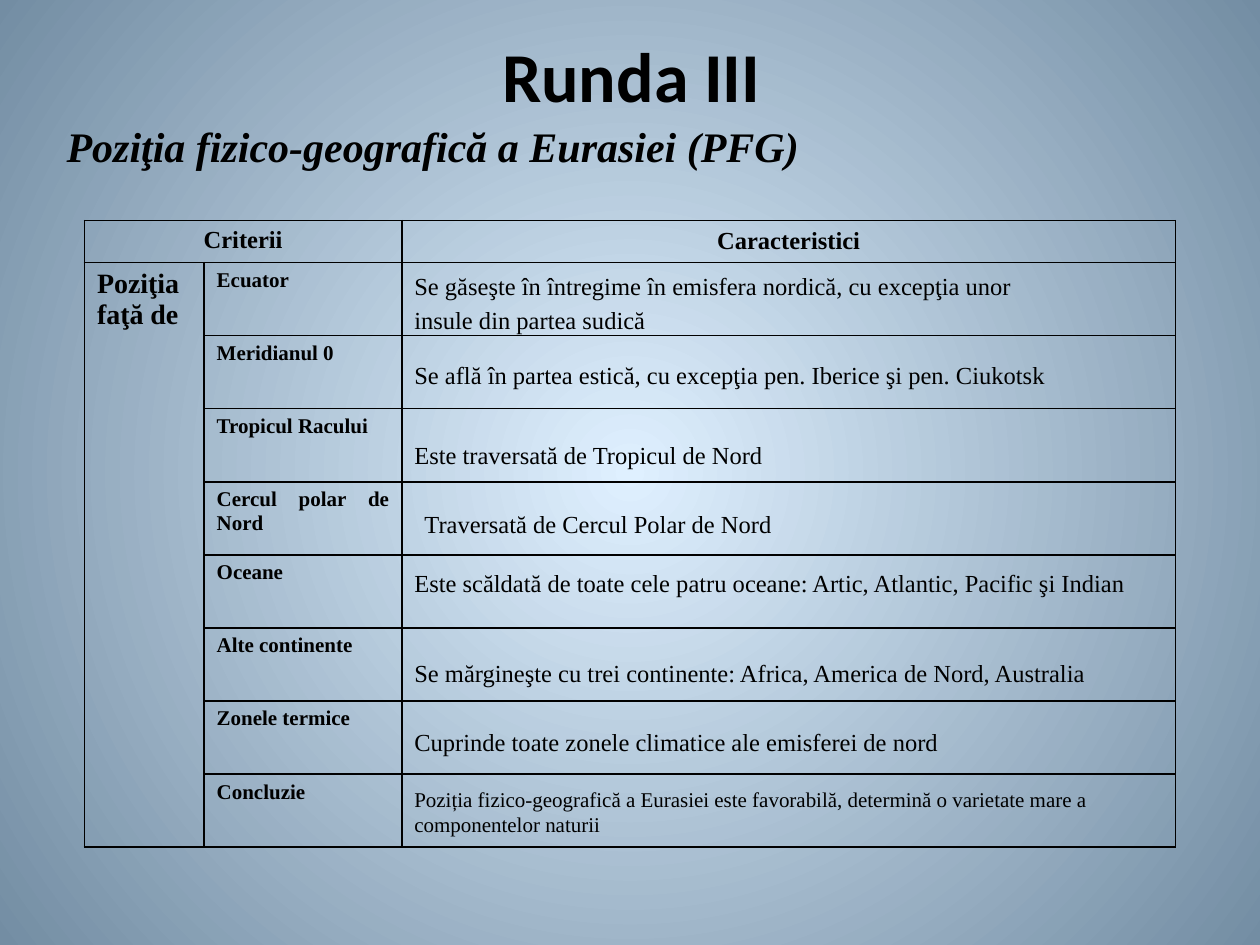
from lxml.etree import SubElement
from pptx import Presentation
from pptx.dml.color import RGBColor
from pptx.enum.text import MSO_ANCHOR as Anchor, MSO_AUTO_SIZE as AutoSize, PP_ALIGN as Align
from pptx.oxml.ns import qn
from pptx.util import Inches, Pt

BLACK = RGBColor(0x00, 0x00, 0x00)
GLOW = RGBColor(0xDF, 0xF0, 0xFF)
STEEL = RGBColor(0x73, 0x8D, 0xA3)
SERIF = "Times New Roman"


def write(paragraph, text, size, font=SERIF, bold=False, italic=False, align=Align.LEFT):
    paragraph.alignment = align
    run = paragraph.add_run()
    run.text = text
    run.font.name, run.font.size = font, Pt(size)
    run.font.bold, run.font.italic = bold, italic
    run.font.color.rgb = BLACK


def add_frame(left, top, width, height, anchor=Anchor.TOP):
    frame = slide.shapes.add_textbox(
        Inches(left), Inches(top), Inches(width), Inches(height)).text_frame
    frame.word_wrap = True
    frame.vertical_anchor = anchor
    return frame


prs = Presentation()
prs.slide_width, prs.slide_height = Inches(10), Inches(7.5)
slide = prs.slides.add_slide(prs.slide_layouts[6])

# Background: light centre fading outwards
backdrop = slide.background.fill
backdrop.gradient()
for stop, colour in zip(backdrop.gradient_stops, (GLOW, STEEL)):
    stop.color.rgb = colour
grad = slide.background._cSld.find(".//" + qn("a:gradFill"))
grad.remove(grad.find(qn("a:lin")))
circle = SubElement(grad, qn("a:path"), {"path": "circle"})
SubElement(circle, qn("a:fillToRect"), {side: "50000" for side in "ltrb"})

# Title and subtitle
title = add_frame(0.51, 0.21, 9, 0.77, Anchor.MIDDLE)
write(title.paragraphs[0], "Runda III", 40, "Calibri", bold=True, align=Align.CENTER)
subtitle = add_frame(0.43, 0.91, 8.12, 0.5, Anchor.MIDDLE)
subtitle.paragraphs[0].space_before = Pt(4.8)
write(subtitle.paragraphs[0], "Poziţia fizico-geografică a Eurasiei (PFG)", 24,
      bold=True, italic=True)

# Criteria table
criteria = ["Ecuator", "Meridianul 0", "Tropicul Racului", "Cercul polar de Nord",
            "Oceane", "Alte continente", "Zonele termice", "Concluzie"]
table = slide.shapes.add_table(len(criteria) + 1, 3, Inches(0.67), Inches(1.75),
                               Inches(8.66), Inches(4.95)).table
table.first_row = table.horz_banding = False
for column, width in zip(table.columns, (0.95, 1.57, 6.14)):
    column.width = Inches(width)
for index, row in enumerate(table.rows):
    row.height = Inches(0.58 if index else 0.31)

# Clear cells with thin black borders
for cell in table.iter_cells():
    props = cell._tc.get_or_add_tcPr()
    for side in ("a:lnL", "a:lnR", "a:lnT", "a:lnB"):
        border = SubElement(props, qn(side), {"w": str(Pt(1))})
        ink = SubElement(border, qn("a:solidFill"))
        SubElement(ink, qn("a:srgbClr"), {"val": str(BLACK)})
    cell.fill.background()

table.cell(0, 0).merge(table.cell(0, 1))
table.cell(1, 0).merge(table.cell(len(criteria), 0))
table.cell(0, 2).vertical_anchor = Anchor.MIDDLE
labels = [(0, 0, "Criterii", 14, Align.CENTER),
          (0, 2, "Caracteristici", 14, Align.CENTER),
          (1, 0, "Poziţia faţă de", 16, Align.LEFT)]
labels += [(row, 1, name, 12, Align.JUSTIFY) for row, name in enumerate(criteria, 1)]
for row, column, label, size, align in labels:
    write(table.cell(row, column).text_frame.paragraphs[0], label, size,
          bold=True, align=align)

# Answers laid over the last column: left, top, width, height, size, space before, lines
answers = [
    (3.19, 2.1, 5.83, 0.61, 14, 2.8,
     ["Se găseşte în întregime în emisfera nordică, cu excepţia unor",
      "insule din partea sudică"]),
    (3.19, 2.81, 5.83, 0.33, 14, 2.8,
     ["Se află în partea estică, cu excepţia pen. Iberice şi pen. Ciukotsk"]),
    (3.19, 3.44, 5.83, 0.33, 14, 0, ["Este traversată de Tropicul de Nord"]),
    (3.27, 3.99, 5.83, 0.33, 14, 0, ["Traversată de Cercul Polar de Nord"]),
    (3.19, 4.46, 6.06, 0.33, 14, 0,
     ["Este scăldată de toate cele patru oceane: Artic, Atlantic, Pacific şi Indian"]),
    (3.19, 5.17, 6.06, 0.33, 14, 0,
     ["Se mărgineşte cu trei continente: Africa, America de Nord, Australia"]),
    (3.19, 5.72, 6.06, 0.33, 14, 0,
     ["Cuprinde toate zonele climatice ale emisferei de nord"]),
    (3.19, 6.19, 6.14, 0.5, 12, 2.4,
     ["Poziția fizico-geografică a Eurasiei este favorabilă, determină o varietate "
      "mare a componentelor naturii"]),
]
for left, top, width, height, size, gap, lines in answers:
    answer = add_frame(left, top, width, height)
    answer.auto_size = AutoSize.SHAPE_TO_FIT_TEXT
    for index, line in enumerate(lines):
        paragraph = answer.add_paragraph() if index else answer.paragraphs[0]
        paragraph.space_before = Pt(gap)
        write(paragraph, line, size)

prs.save("out.pptx")
